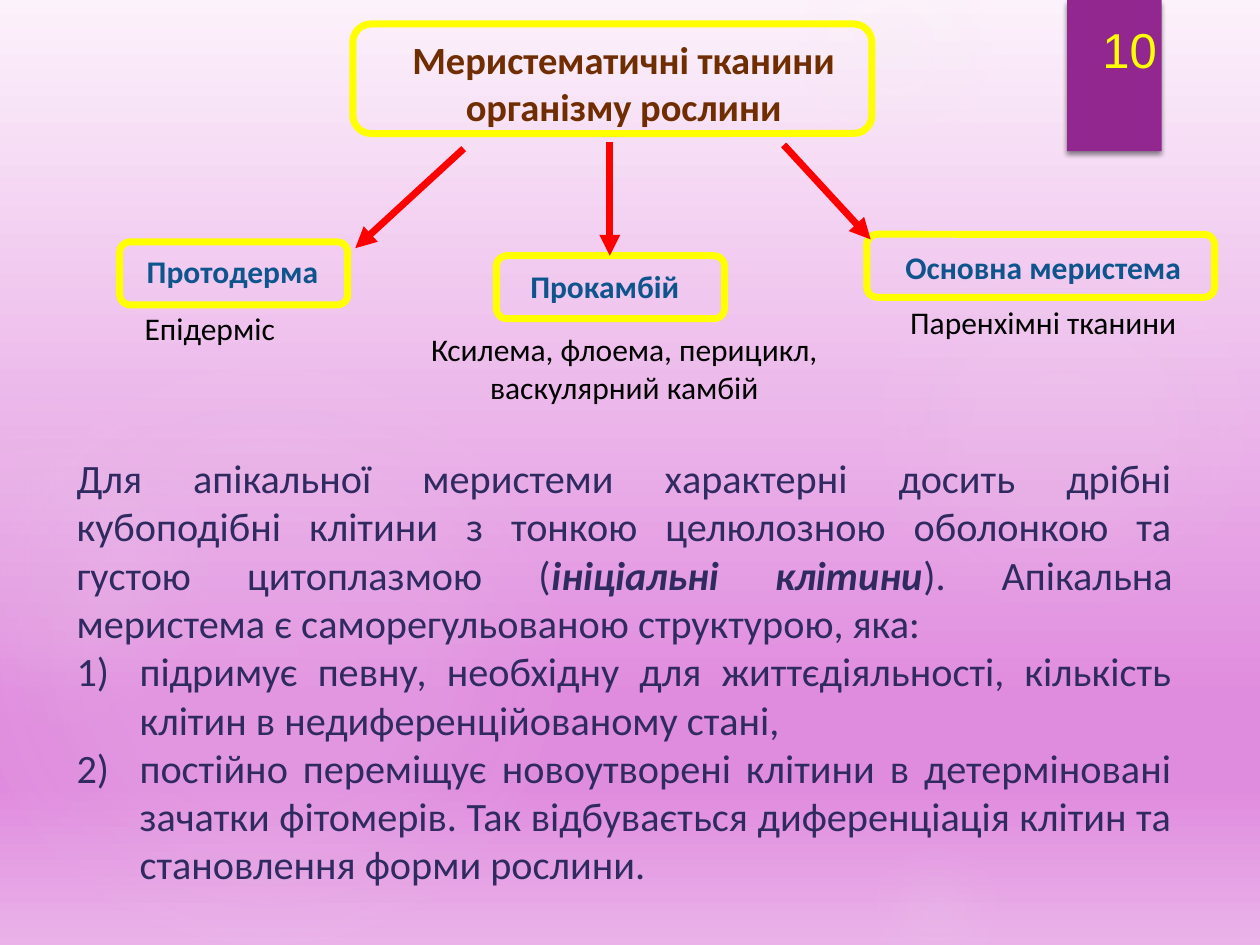
from lxml import etree
from pptx import Presentation
from pptx.dml.color import RGBColor
from pptx.enum.shapes import MSO_CONNECTOR, MSO_SHAPE
from pptx.enum.text import MSO_ANCHOR, PP_ALIGN
from pptx.oxml.ns import qn
from pptx.util import Inches, Pt

CENTER, JUSTIFY = PP_ALIGN.CENTER, PP_ALIGN.JUSTIFY
TOP, BOTTOM = MSO_ANCHOR.TOP, MSO_ANCHOR.BOTTOM
OVAL, RECTANGLE = MSO_SHAPE.OVAL, MSO_SHAPE.RECTANGLE
ROUNDED = MSO_SHAPE.ROUNDED_RECTANGLE
STRAIGHT = MSO_CONNECTOR.STRAIGHT

YELLOW = RGBColor(0xFF, 0xFF, 0x00)
RED = RGBColor(0xFF, 0x00, 0x00)
PURPLE = RGBColor(0x92, 0x27, 0x8F)
BROWN = RGBColor(0x70, 0x2D, 0x00)
BLUE = RGBColor(0x0D, 0x55, 0x8C)
BLACK = RGBColor(0x00, 0x00, 0x00)
INDIGO = RGBColor(0x2F, 0x2B, 0x60)
GLOW = RGBColor(0xF2, 0xEF, 0xF3)
BACKGROUND_STOPS = [
    (0, RGBColor(0xFC, 0xF2, 0xFB), 100),
    (74, RGBColor(0xE0, 0x8C, 0xDE), 100),
    (83, RGBColor(0xE0, 0x8C, 0xDE), 100),
    (100, RGBColor(0xEA, 0xB2, 0xE9), 100),
]

GLOWS = [
    (6.89, 1.83, 3.08, 7, 6, 69),
    (6.22, -0.5, 1.75, 14, 7, 73),
    (6.89, 6.67, 1.08, 9, 5, 66),
    (-0.17, 2.92, 4.58, 11, 10, 75),
    (-0.92, 3.17, 2.58, 8, 8, 72),
]
LABELS = [
    ("Меристематичні тканини організму рослини", (2.8, 0.24, 4.3, 0.84), 22, BROWN, True),
    ("Основна меристема", (6.9, 1.92, 2.76, 0.4), 18, BLUE, True),
    ("Протодерма", (0.94, 1.95, 1.81, 0.4), 18, BLUE, True),
    ("Прокамбій", (3.8, 2.07, 2, 0.4), 18, BLUE, True),
    ("Епідерміс", (0.76, 2.4, 1.81, 0.4), 18, BLACK, False),
    ("Паренхімні тканини", (6.94, 2.36, 2.68, 0.4), 18, BLACK, False),
    ("Ксилема, флоема, перицикл, васкулярний камбій", (2.82, 2.57, 4.27, 0.71), 18, BLACK, False),
]
FRAMES = [
    (2.8, 0.19, 4.12, 0.87),
    (0.95, 1.92, 1.81, 0.5),
    (6.88, 1.86, 2.76, 0.5),
    (3.94, 2.03, 1.81, 0.5),
]
ARROWS = [
    (4.84, 1.13, 4.84, 2.03),
    (3.68, 1.18, 2.82, 1.97),
    (6.22, 1.15, 6.91, 1.9),
]
INTRO = [
    ("Для апікальної меристеми характерні досить дрібні кубоподібні клітини "
     "з тонкою целюлозною оболонкою та густою цитоплазмою (", False),
    ("ініціальні клітини", True),
    ("). Апікальна меристема є саморегульованою структурою, яка:", False),
]
POINTS = [
    "підримує певну, необхідну для життєдіяльності, кількість клітин "
    "в недиференційованому стані,",
    "постійно переміщує новоутворені клітини в детерміновані зачатки фітомерів. "
    "Так відбувається диференціація клітин та становлення форми рослини.",
]


def add_child(parent, tag, **attributes):
    child = etree.SubElement(parent, qn(tag))
    for name, value in attributes.items():
        child.set(name, str(value))
    return child


def add_color(parent, color, opacity):
    node = add_child(parent, "a:srgbClr", val=color)
    if opacity < 100:
        add_child(node, "a:alpha", val=opacity * 1000)


def paint_gradient(fill, owner, stops, radial=False):
    fill.gradient()
    gradient = owner.find(".//" + qn("a:gradFill"))
    for child in list(gradient):
        gradient.remove(child)
    stop_list = add_child(gradient, "a:gsLst")
    for position, color, opacity in stops:
        add_color(add_child(stop_list, "a:gs", pos=position * 1000), color, opacity)
    if radial:
        center = add_child(gradient, "a:path", path="circle")
        add_child(center, "a:fillToRect", l=50000, t=50000, r=50000, b=50000)
    else:
        add_child(gradient, "a:lin", ang=90 * 60000, scaled=0)


def add_plain_shape(page, kind, place):
    shape = page.shapes.add_shape(kind, *map(Inches, place))
    shape.shadow.inherit = False
    shape.fill.background()
    shape.line.fill.background()
    return shape


def add_glow(page, left, top, size, inner, middle, edge):
    glow = add_plain_shape(page, OVAL, (left, top, size, size))
    stops = [(0, GLOW, inner), (36, GLOW, middle), (edge, GLOW, 0)]
    paint_gradient(glow.fill, glow.element, stops, radial=True)


def add_ribbon(page):
    ribbon = add_plain_shape(page, RECTANGLE, (8.47, 0, 0.75, 1.2))
    ribbon.fill.solid()
    ribbon.fill.fore_color.rgb = PURPLE
    effects = ribbon.element.spPr.find(qn("a:effectLst"))
    shadow = add_child(effects, "a:outerShdw", blurRad=Pt(3), dist=Pt(2), dir=90 * 60000)
    add_color(shadow, BLACK, 45)


def add_frame(page, place):
    frame = add_plain_shape(page, ROUNDED, place)
    frame.line.color.rgb = YELLOW
    frame.line.width = Pt(4)


def add_arrow(page, ends):
    arrow = page.shapes.add_connector(STRAIGHT, *map(Inches, ends))
    arrow.line.color.rgb = RED
    arrow.line.width = Pt(4)
    add_child(arrow.line._get_or_add_ln(), "a:tailEnd", type="triangle")
    add_child(arrow.element.spPr, "a:effectLst")


def add_text_box(page, place, anchor=TOP):
    frame = page.shapes.add_textbox(*map(Inches, place)).text_frame
    frame.word_wrap = True
    frame.vertical_anchor = anchor
    return frame


def style(para, size, color, align=CENTER, name="Calibri"):
    para.alignment = align
    para.font.size = Pt(size)
    para.font.name = name
    para.font.color.rgb = color


def add_label(page, text, place, size, color, bold=False, name="Calibri", anchor=TOP):
    para = add_text_box(page, place, anchor).paragraphs[0]
    para.text = text
    style(para, size, color, name=name)
    para.font.bold = bold


def add_description(page):
    frame = add_text_box(page, (0.51, 3.55, 8.9, 3.58))
    intro = frame.paragraphs[0]
    for text, stressed in INTRO:
        span = intro.add_run()
        span.text = text
        span.font.bold = span.font.italic = stressed
    style(intro, 23, INDIGO, JUSTIFY)
    for point in POINTS:
        para = frame.add_paragraph()
        para.text = point
        properties = para._p.get_or_add_pPr()
        properties.set("marL", str(Inches(0.5)))
        properties.set("indent", str(-Inches(0.5)))
        add_child(properties, "a:buFont", typeface="+mj-lt")
        add_child(properties, "a:buAutoNum", type="arabicParenR")
        style(para, 23, INDIGO, JUSTIFY)


def main():
    deck = Presentation()
    deck.slide_width, deck.slide_height = Inches(10), Inches(7.5)
    page = deck.slides.add_slide(deck.slide_layouts[6])
    paint_gradient(page.background.fill, page.element, BACKGROUND_STOPS)
    for glow in GLOWS:
        add_glow(page, *glow)
    add_ribbon(page)
    for label in LABELS:
        add_label(page, *label)
    for place in FRAMES:
        add_frame(page, place)
    for ends in ARROWS:
        add_arrow(page, ends)
    add_label(page, "10", (8.62, 0, 0.69, 0.67), 28, YELLOW, name="Arial", anchor=BOTTOM)
    add_description(page)
    deck.save("out.pptx")


if __name__ == "__main__":
    main()
